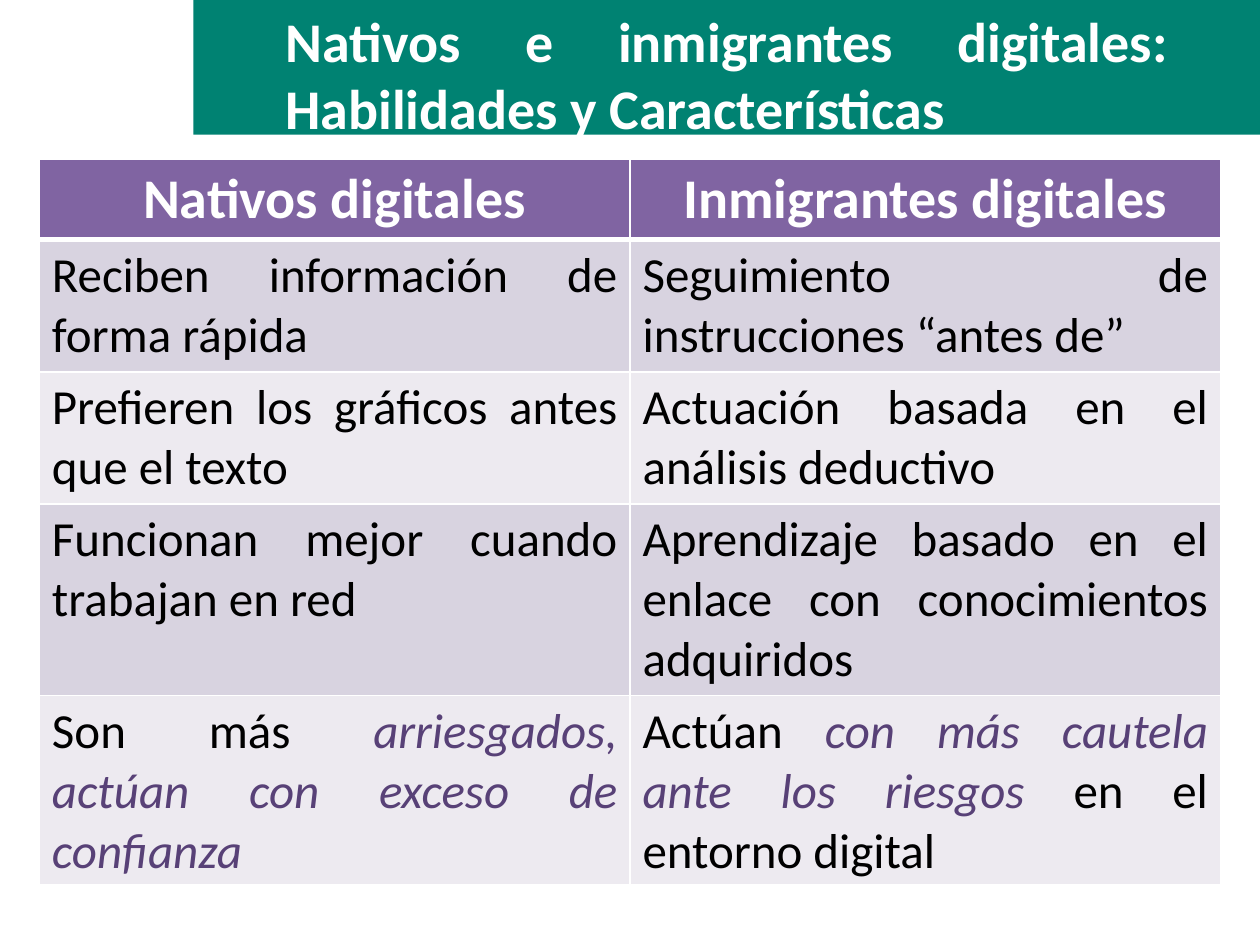
"""Build the slide comparing digital natives and digital immigrants."""
from dataclasses import dataclass

import pptx
import pptx.dml.color
import pptx.enum.shapes
import pptx.enum.text
import pptx.oxml
import pptx.oxml.ns
import pptx.util

Pt = pptx.util.Pt
RGBColor = pptx.dml.color.RGBColor
Align = pptx.enum.text.PP_ALIGN

WHITE = RGBColor(0xFF, 0xFF, 0xFF)
BLACK = RGBColor(0x00, 0x00, 0x00)
TEAL = RGBColor(0x00, 0x82, 0x72)
PURPLE = RGBColor(0x80, 0x64, 0xA2)
DARK_PURPLE = RGBColor(0x58, 0x41, 0x77)
DARK_BAND = RGBColor(0xD8, 0xD3, 0xE0)
LIGHT_BAND = RGBColor(0xED, 0xEA, 0xF0)
FONT = "Calibri"


@dataclass(frozen=True)
class Span:
    text: str
    color: RGBColor = BLACK
    size: float = 28
    bold: bool = False
    italic: bool = False


@dataclass(frozen=True)
class Row:
    height: float
    cells: tuple[tuple[Span, ...], ...]


def heading(text: str) -> Span:
    return Span(text, WHITE, 32, bold=True)


def emphasis(text: str) -> Span:
    return Span(text, DARK_PURPLE, italic=True)


ROWS = (
    Row(46, ((heading("Nativos digitales"),), (heading("Inmigrantes digitales"),))),
    Row(75.5, ((Span("Reciben información de forma rápida"),),
               (Span("Seguimiento de instrucciones “antes de”"),))),
    Row(75.5, ((Span("Prefieren los gráficos antes que el texto"),),
               (Span("Actuación basada en el análisis deductivo"),))),
    Row(109.5, ((Span("Funcionan mejor cuando trabajan en red"),),
                (Span("Aprendizaje basado en el enlace con conocimientos adquiridos"),))),
    Row(107.5, ((Span("Son más "), emphasis("arriesgados, actúan con exceso de confianza")),
                (Span("Actúan "), emphasis("con más cautela ante los riesgos "),
                 Span("en el entorno digital")))),
)


def write(frame, spans: tuple[Span, ...], alignment) -> None:
    para = frame.paragraphs[0]
    para.alignment = alignment
    for span in spans:
        run = para.add_run()
        run.text = span.text
        font = run.font
        font.name, font.size = FONT, Pt(span.size)
        font.bold, font.italic = span.bold, span.italic
        font.color.rgb = span.color


def set_borders(cell, top: float, bottom: float) -> None:
    properties = cell._tc.get_or_add_tcPr()
    for side, width in (("L", 1), ("R", 1), ("T", top), ("B", bottom)):
        properties.append(pptx.oxml.parse_xml(
            f'<a:ln{side} {pptx.oxml.ns.nsdecls("a")} w="{Pt(width)}">'
            f'<a:solidFill><a:srgbClr val="{WHITE}"/></a:solidFill></a:ln{side}>'))


def add_banner(page) -> None:
    band = page.shapes.add_shape(pptx.enum.shapes.MSO_SHAPE.RECTANGLE,
                                 Pt(110.5), Pt(0), Pt(609.5), Pt(77))
    band.shadow.inherit = False
    band.fill.solid()
    band.fill.fore_color.rgb = TEAL
    band.line.fill.background()
    box = page.shapes.add_textbox(Pt(156), Pt(0), Pt(519), Pt(85))
    box.text_frame.word_wrap = True
    title = heading("Nativos e inmigrantes digitales: Habilidades y Características")
    write(box.text_frame, (title,), Align.JUSTIFY)


def add_comparison(page, rows: tuple[Row, ...]) -> None:
    height = sum(row.height for row in rows)
    table = page.shapes.add_table(len(rows), 2, Pt(22.5), Pt(91), Pt(675), Pt(height)).table
    for index, row in enumerate(rows):
        table.rows[index].height = Pt(row.height)
        band = PURPLE if index == 0 else DARK_BAND if index % 2 else LIGHT_BAND
        alignment = Align.JUSTIFY if index else Align.CENTER
        for column, spans in enumerate(row.cells):
            cell = table.cell(index, column)
            set_borders(cell, top=3 if index == 1 else 1, bottom=1 if index else 3)
            cell.fill.solid()
            cell.fill.fore_color.rgb = band
            write(cell.text_frame, spans, alignment)


def main() -> None:
    deck = pptx.Presentation()
    deck.slide_width, deck.slide_height = Pt(720), Pt(540)
    page = deck.slides.add_slide(deck.slide_layouts[6])
    add_banner(page)
    add_comparison(page, ROWS)
    deck.save("out.pptx")


if __name__ == "__main__":
    main()
